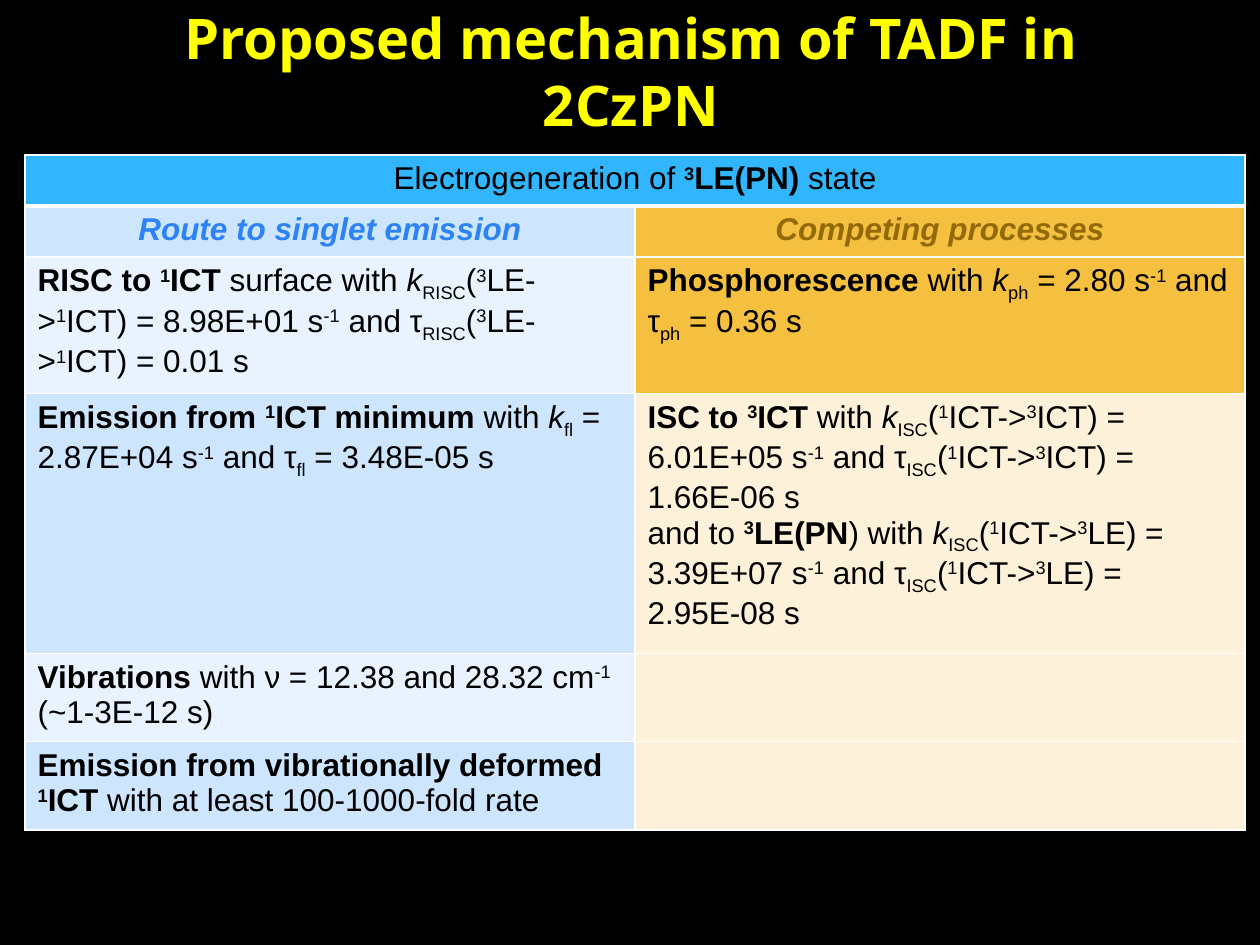
from lxml.etree import SubElement
from pptx import Presentation
from pptx.dml.color import RGBColor
from pptx.enum.text import MSO_ANCHOR, PP_ALIGN
from pptx.oxml.ns import qn
from pptx.util import Emu, Pt

PX = 914400 // 126
TITLE = "*Proposed mechanism of TADF in 2CzPN*"
BOX = (77, 30, 1108, 81)
ORIGIN = (25, 155)
WIDE = 610
HEIGHTS = [51, 51, 136, 260, 88, 88]
# Marks switch on and off: * bold, | italic, ^ superscript, _ subscript
ROWS = [
    [("Electrogeneration of *^3^LE(PN) *state", "31B6FD", "000000"),
     ("", "31B6FD", "000000")],
    [("*|Route to singlet emission|*", "CEE5FE", "2D83F4"),
     ("*|Competing processes|*", "F5C040", "936A08")],
    [("*RISC to ^1^ICT *surface with |k|_RISC_(^3^LE->^1^ICT) = 8.98E+01 s^-1^"
      " and τ_RISC_(^3^LE->^1^ICT) = 0.01 s", "E8F3FF", "000000"),
     ("*Phosphorescence *with |k|_ph_ = 2.80 s^-1^ and τ_ph_ = 0.36 s",
      "F5C040", "000000")],
    [("*Emission from ^1^ICT minimum *with |k|_fl_ = 2.87E+04 s^-1^"
      " and τ_fl_ = 3.48E-05 s", "CEE5FE", "000000"),
     ("*ISC to ^3^ICT* with |k|_ISC_(^1^ICT->^3^ICT) = 6.01E+05 s^-1^"
      " and τ_ISC_(^1^ICT->^3^ICT) = 1.66E-06 s\n"
      "and to *^3^LE(PN*) with |k|_ISC_(^1^ICT->^3^LE) = 3.39E+07 s^-1^"
      " and τ_ISC_(^1^ICT->^3^LE) = 2.95E-08 s", "FDF2D9", "000000")],
    [("*Vibrations *with ν = 12.38 and 28.32 cm^-1^ (~1-3E-12 s)",
      "E8F3FF", "000000"), ("", "FDF2D9", "000000")],
    [("*Emission from vibrationally deformed ^1^ICT* with at least"
      " 100-1000-fold rate", "CEE5FE", "000000"), ("", "FDF2D9", "000000")],
]


def px(size):
    """Turn px into EMU."""
    return Emu(size * PX)


def paint(fill, color):
    """Set a solid colour."""
    fill.solid()
    fill.fore_color.rgb = RGBColor.from_string(color)


def split(line):
    """Yield each piece of text with the marks that hold for it."""
    marks, piece = set(), ""
    for char in line:
        if char in "*|^_":
            if piece:
                yield piece, set(marks)
            marks ^= {char}
            piece = ""
        else:
            piece += char
    if piece:
        yield piece, marks


def write(frame, text, face, size, color, align):
    """Fill a text frame with marked text."""
    for i, line in enumerate(text.split("\n")):
        para = frame.add_paragraph() if i else frame.paragraphs[0]
        para.alignment = align
        for piece, marks in split(line):
            run = para.add_run()
            run.text = piece
            font = run.font
            font.name, font.size = face, Pt(size)
            font.bold, font.italic = "*" in marks, "|" in marks
            paint(font.fill, color)
            if marks & {"^", "_"}:
                base = "30000" if "^" in marks else "-25000"
                font._element.set("baseline", base)


def edge(cell, side, width):
    """Draw one white cell border."""
    line = SubElement(cell._tc.get_or_add_tcPr(), qn(f"a:ln{side}"),
                      w=str(Pt(width)))
    fill = SubElement(line, qn("a:solidFill"))
    SubElement(fill, qn("a:srgbClr"), val="FFFFFF")


def main():
    """Build the slide."""
    deck = Presentation()
    deck.slide_width, deck.slide_height = px(1260), px(945)
    slide = deck.slides.add_slide(deck.slide_layouts[6])
    paint(slide.background.fill, "000000")

    frame = slide.shapes.add_textbox(*map(px, BOX)).text_frame
    frame.word_wrap = True
    frame.vertical_anchor = MSO_ANCHOR.MIDDLE
    frame.margin_left = frame.margin_right = px(20)
    write(frame, TITLE, "Noto Sans", 32, "FFFF00", PP_ALIGN.CENTER)

    table = slide.shapes.add_table(
        len(ROWS), 2, *map(px, (*ORIGIN, 2 * WIDE, sum(HEIGHTS)))).table
    for col in table.columns:
        col.width = px(WIDE)
    for r, row in enumerate(ROWS):
        table.rows[r].height = px(HEIGHTS[r])
        align = PP_ALIGN.CENTER if r < 2 else PP_ALIGN.LEFT
        for c, (text, back, color) in enumerate(row):
            cell = table.cell(r, c)
            for side in "LRTB":
                thick = (r, side) in ((0, "B"), (1, "T"))
                edge(cell, side, 3 if thick else 1)
            paint(cell.fill, back)
            write(cell.text_frame, text, "Arial", 18, color, align)
    table.cell(0, 0).merge(table.cell(0, 1))
    deck.save("out.pptx")


if __name__ == "__main__":
    main()
